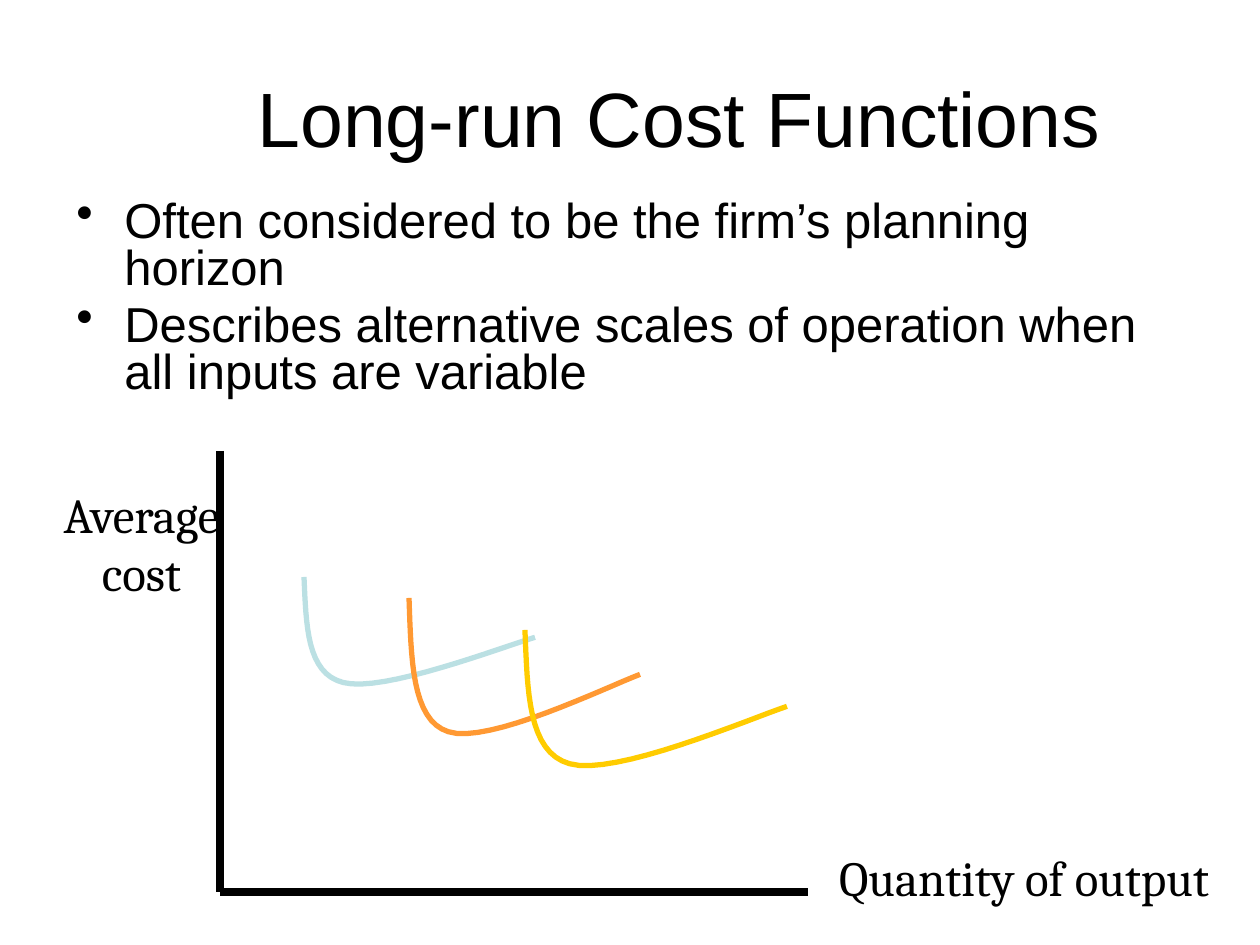
import dataclasses

import pptx
import pptx.dml.color
import pptx.enum.shapes
import pptx.enum.text
import pptx.oxml
import pptx.oxml.ns
import pptx.util

UNIT = 914400 / 126
ALIGN = pptx.enum.text.PP_ALIGN
ANCHOR = pptx.enum.text.MSO_ANCHOR
BEND = [(0, 0), (0.01, 0.41), (0.01, 0.83), (0.17, 0.91),
        (0.34, 1), (0.85, 0.61), (1, 0.52)]


@dataclasses.dataclass(frozen=True)
class Theme:
    """Hold the colours, fonts and sizes of the slide."""
    ink: str = "000000"
    small: str = "BBE0E3"
    medium: str = "FF9933"
    large: str = "FFCC00"
    sans: str = "Arial"
    serif: str = "Cambria"
    title: float = 44
    body: float = 28
    gap: float = 5.6
    axis: float = 4.5
    curve: float = 3


THEME = Theme()


def px(num):
    """Turn pixels into EMU."""
    return pptx.util.Emu(round(num * UNIT))


def tint(code):
    """Turn a hex code into a colour."""
    return pptx.dml.color.RGBColor.from_string(code)


def add_run(para, text, font, size):
    """Add one styled run to a paragraph."""
    run = para.add_run()
    run.text = text
    run.font.name = font
    run.font.size = pptx.util.Pt(size)
    run.font.color.rgb = tint(THEME.ink)


def add_frame(slide, box, anchor):
    """Add a wrapping text box and return its frame."""
    frame = slide.shapes.add_textbox(*map(px, box)).text_frame
    frame.word_wrap = True
    frame.vertical_anchor = anchor
    return frame


def add_label(slide, box, text, font, size, anchor):
    """Add one centred line of text."""
    para = add_frame(slide, box, anchor).paragraphs[0]
    para.alignment = ALIGN.CENTER
    add_run(para, text, font, size)


def add_list(slide, box, items):
    """Add a bulleted list with hanging indents."""
    frame = add_frame(slide, box, ANCHOR.TOP)
    for pos, item in enumerate(items):
        para = frame.add_paragraph() if pos else frame.paragraphs[0]
        para.line_spacing = 0.8
        para.space_before = pptx.util.Pt(THEME.gap)
        props = para._p.get_or_add_pPr()
        props.set("marL", str(px(48)))
        props.set("indent", str(px(-48)))
        mark = pptx.oxml.parse_xml(
            f'<a:buChar {pptx.oxml.ns.nsdecls("a")} char="•"/>')
        props.append(mark)
        add_run(para, item, THEME.sans, THEME.body)


def add_axis(slide, start, end):
    """Add one straight axis line."""
    kind = pptx.enum.shapes.MSO_CONNECTOR.STRAIGHT
    line = slide.shapes.add_connector(kind, *map(px, start + end))
    line.line.color.rgb = tint(THEME.ink)
    line.line.width = pptx.util.Pt(THEME.axis)
    flat = f'<a:effectLst {pptx.oxml.ns.nsdecls("a")}/>'
    line._element.spPr.append(pptx.oxml.parse_xml(flat))


def blend(ctrl, t):
    """Return the point at t on a cubic curve."""
    s = 1 - t
    parts = (s ** 3, 3 * s * s * t, 3 * s * t * t, t ** 3)
    return tuple(sum(w * p[i] for w, p in zip(parts, ctrl)) for i in (0, 1))


def add_curve(slide, box, code, steps=16):
    """Add a cost curve scaled to its box."""
    left, top, wide, high = box
    dots = [blend(BEND[at:at + 4], step / steps)
            for at in (0, 3) for step in range(1, steps + 1)]
    path = slide.shapes.build_freeform(px(left), px(top))
    path.add_line_segments(
        [(px(left + x * wide), px(top + y * high)) for x, y in dots],
        close=False)
    shape = path.convert_to_shape()
    shape.shadow.inherit = False
    shape.fill.background()
    shape.line.color.rgb = tint(code)
    shape.line.width = pptx.util.Pt(THEME.curve)


def main():
    """Build and save the slide."""
    deck = pptx.Presentation()
    deck.slide_width, deck.slide_height = px(1260), px(945)
    slide = deck.slides.add_slide(deck.slide_layouts[6])
    add_label(slide, (170, 38, 1019, 157), "Long-run Cost Functions",
              THEME.sans, THEME.title, ANCHOR.MIDDLE)
    add_list(slide, (64, 195, 1126, 231), [
        "Often considered to be the firm’s planning horizon",
        "Describes alternative scales of operation when all inputs are variable",
    ])
    origin = (220, 892)
    add_axis(slide, (220, 451), origin)
    add_axis(slide, origin, (808, 892))
    for box, text in [((819, 840, 410, 73), "Quantity of output"),
                      ((42, 535, 199, 73), "Average cost")]:
        add_label(slide, box, text, THEME.serif, THEME.body, ANCHOR.BOTTOM)
    for box, code in [((304, 577, 231, 116), THEME.small),
                      ((409, 598, 231, 147), THEME.medium),
                      ((525, 630, 262, 147), THEME.large)]:
        add_curve(slide, box, code)
    deck.save("out.pptx")


if __name__ == "__main__":
    main()
